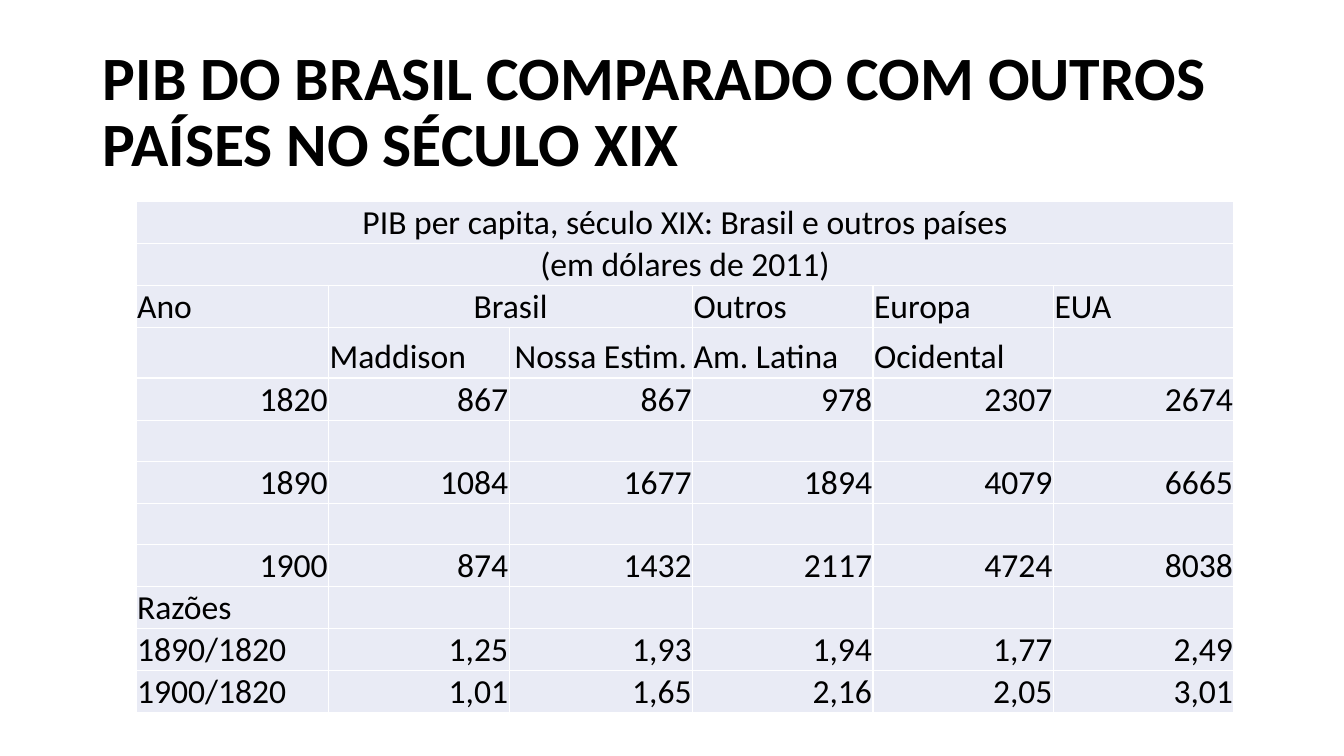
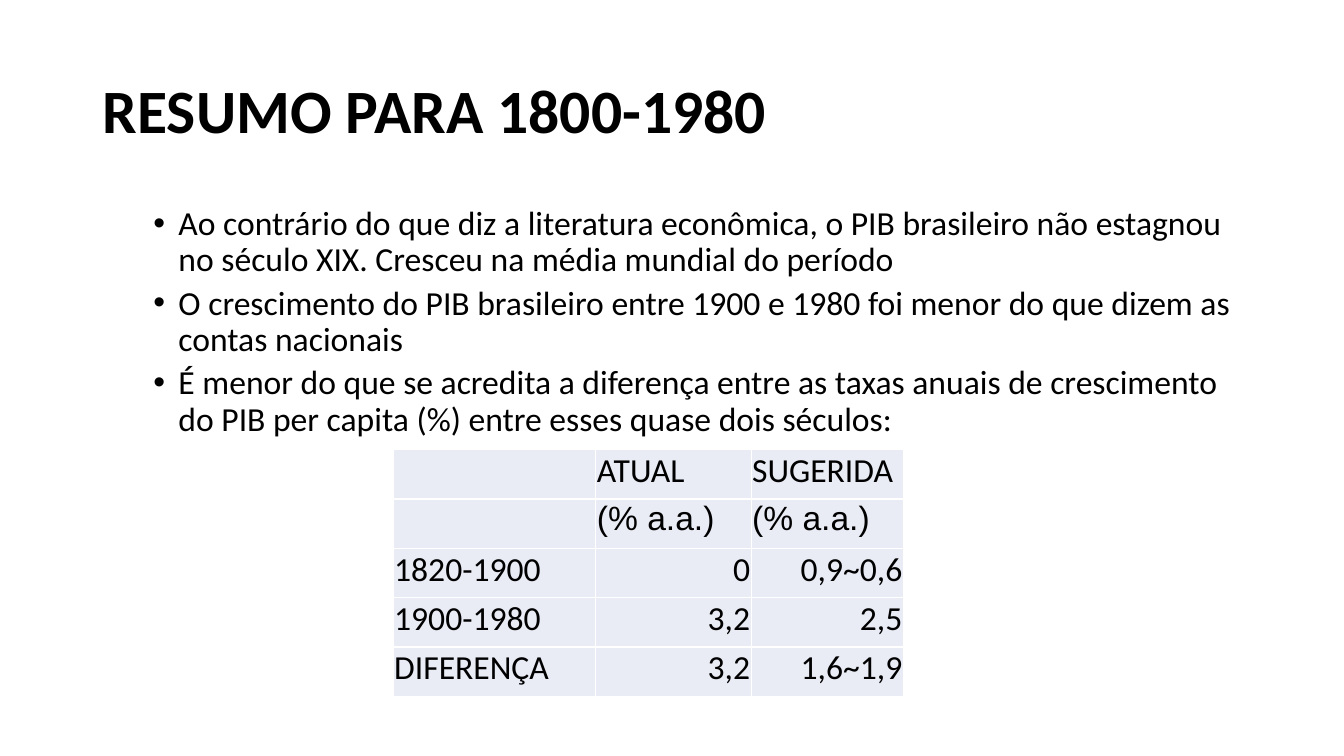
from lxml.etree import SubElement
from pptx import Presentation
from pptx.dml.color import RGBColor
from pptx.enum.text import MSO_ANCHOR, MSO_AUTO_SIZE, PP_ALIGN
from pptx.oxml.ns import qn
from pptx.util import Emu, Pt

EMU_PER_PX = 9144
SLIDE_SIZE = (1333, 750)
TITLE_BOX = (92, 40, 1150, 145)
BODY_BOX = (92, 200, 1150, 510)
BLACK, WHITE, CELL_FILL = "000000", "FFFFFF", "E9EBF5"
FONT, NOTE_FONT = "Calibri", "Arial"
TITLE_SIZE, TEXT_SIZE = 44, 24

GDP_TITLE = "PIB DO BRASIL COMPARADO COM OUTROS PAÍSES NO SÉCULO XIX"
GDP_TABLE = {
    "origin": (135, 200),
    "columns": [191, 179, 182, 179, 179, 179],
    "rows": [41, 41, 41, 50] + [41] * 8,
    "anchor": MSO_ANCHOR.BOTTOM,
    "merges": [(0, 0, 5), (1, 0, 5), (2, 1, 2)],
    "centred": {(0, 0), (1, 0), (2, 1), (3, 2)},
    "fonts": {},
    "cells": [
        ["PIB per capita, século XIX: Brasil e outros países"],
        ["(em dólares de 2011)"],
        ["Ano", "Brasil", "", "Outros", "Europa", "EUA"],
        ["", "Maddison", "Nossa Estim.", "Am. Latina", "Ocidental"],
        ["1820", "867", "867", "978", "2307", "2674"],
        [],
        ["1890", "1084", "1677", "1894", "4079", "6665"],
        [],
        ["1900", "874", "1432", "2117", "4724", "8038"],
        ["Razões"],
        ["1890/1820", "1,25", "1,93", "1,94", "1,77", "2,49"],
        ["1900/1820", "1,01", "1,65", "2,16", "2,05", "3,01"],
    ],
}

SUMMARY_TITLE = "RESUMO PARA 1800-1980"
SUMMARY_POINTS = [
    "Ao contrário do que diz a literatura econômica, o PIB brasileiro não estagnou "
    "no século XIX. Cresceu na média mundial do período",
    "O crescimento do PIB brasileiro entre 1900 e 1980 foi menor do que dizem as "
    "contas nacionais",
    "É menor do que se acredita a diferença entre as taxas anuais de crescimento "
    "do PIB per capita (%) entre esses quase dois séculos:",
]
GROWTH_TABLE = {
    "origin": (390, 446),
    "columns": [201, 154, 151],
    "rows": [49] * 5,
    "anchor": MSO_ANCHOR.TOP,
    "merges": [],
    "centred": set(),
    "fonts": {(1, 1): NOTE_FONT, (1, 2): NOTE_FONT},
    "cells": [
        ["", "ATUAL", "SUGERIDA"],
        ["", "(% a.a.)", "(% a.a.)"],
        ["1820-1900", "0", "0,9~0,6"],
        ["1900-1980", "3,2", "2,5"],
        ["DIFERENÇA", "3,2", "1,6~1,9"],
    ],
}


def px(length):
    return Emu(length * EMU_PER_PX)


def color(value):
    return RGBColor.from_string(value)


def place(shape, box):
    shape.left, shape.top, shape.width, shape.height = map(px, box)


def add_run(paragraph, text, size=TEXT_SIZE, font=FONT, bold=False):
    run = paragraph.add_run()
    run.text = text
    run.font.size = Pt(size)
    run.font.name = font
    run.font.bold = bold
    run.font.color.rgb = color(BLACK)


def add_titled_slide(presentation, layout_index, title):
    slide = presentation.slides.add_slide(presentation.slide_layouts[layout_index])
    shape = slide.shapes.title
    place(shape, TITLE_BOX)
    frame = shape.text_frame
    frame.auto_size = MSO_AUTO_SIZE.NONE
    frame.vertical_anchor = MSO_ANCHOR.MIDDLE
    paragraph = frame.paragraphs[0]
    paragraph.alignment = PP_ALIGN.LEFT
    paragraph.line_spacing = 0.9
    add_run(paragraph, title, TITLE_SIZE, bold=True)
    return slide


def fill_body(shape, points):
    place(shape, BODY_BOX)
    frame = shape.text_frame
    frame.auto_size = MSO_AUTO_SIZE.NONE
    for index, point in enumerate(points):
        paragraph = frame.add_paragraph() if index else frame.paragraphs[0]
        paragraph.level = 1
        paragraph.line_spacing = 0.9
        paragraph.space_before = Pt(5)
        properties = paragraph._p.get_or_add_pPr()
        properties.set("marL", str(px(75)))
        properties.set("indent", str(px(-25)))
        SubElement(properties, qn("a:buFont"), typeface=NOTE_FONT)
        SubElement(properties, qn("a:buChar"), char="•")
        add_run(paragraph, point)


def add_borders(cell):
    properties = cell._tc.get_or_add_tcPr()
    for side in ("L", "R", "T", "B"):
        line = SubElement(properties, qn(f"a:ln{side}"), w=str(Pt(1)))
        SubElement(SubElement(line, qn("a:solidFill")), qn("a:srgbClr"), val=WHITE)


def pick_alignment(text, centred):
    if centred:
        return PP_ALIGN.CENTER
    is_number = text[:1].isdigit() and not set(text) & set("-/")
    return PP_ALIGN.RIGHT if is_number else PP_ALIGN.LEFT


def add_data_table(slide, data):
    columns, rows = data["columns"], data["rows"]
    box = (*data["origin"], sum(columns), sum(rows))
    table = slide.shapes.add_table(len(rows), len(columns), *map(px, box)).table
    table.first_row = table.horz_banding = False
    for column, width in zip(table.columns, columns):
        column.width = px(width)
    for row, height in zip(table.rows, rows):
        row.height = px(height)
    for row, first, last in data["merges"]:
        table.cell(row, first).merge(table.cell(row, last))
    for row, texts in enumerate(data["cells"]):
        for column in range(len(columns)):
            cell = table.cell(row, column)
            cell.margin_left = cell.margin_right = cell.margin_top = px(1)
            cell.margin_bottom = 0
            cell.vertical_anchor = data["anchor"]
            add_borders(cell)
            cell.fill.solid()
            cell.fill.fore_color.rgb = color(CELL_FILL)
            text = texts[column] if column < len(texts) else ""
            if text:
                key = (row, column)
                paragraph = cell.text_frame.paragraphs[0]
                paragraph.alignment = pick_alignment(text, key in data["centred"])
                add_run(paragraph, text, font=data["fonts"].get(key, FONT))


def main():
    presentation = Presentation()
    presentation.slide_width, presentation.slide_height = map(px, SLIDE_SIZE)
    gdp_slide = add_titled_slide(presentation, 5, GDP_TITLE)
    add_data_table(gdp_slide, GDP_TABLE)
    summary_slide = add_titled_slide(presentation, 1, SUMMARY_TITLE)
    fill_body(summary_slide.placeholders[1], SUMMARY_POINTS)
    add_data_table(summary_slide, GROWTH_TABLE)
    presentation.save("out.pptx")


if __name__ == "__main__":
    main()
